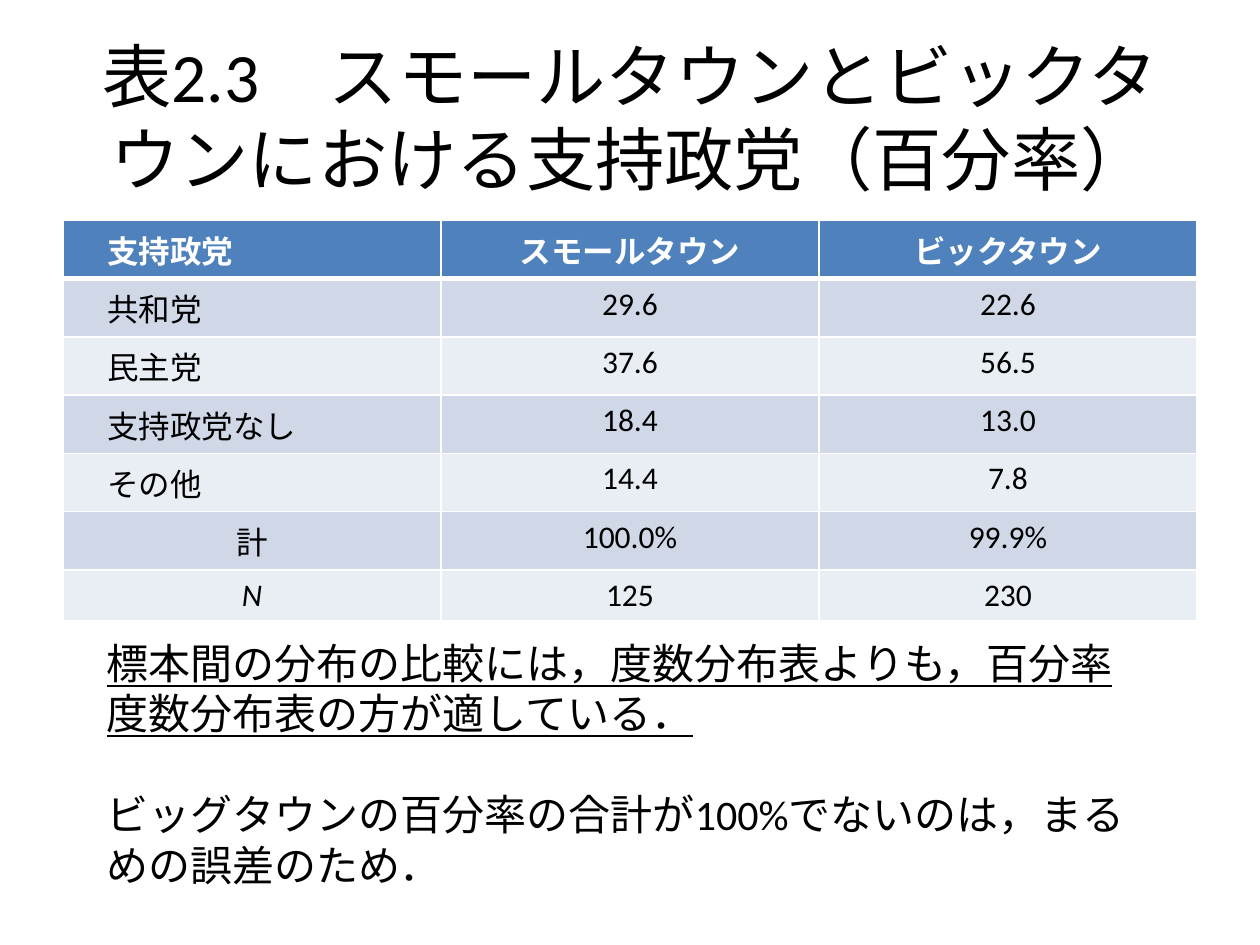
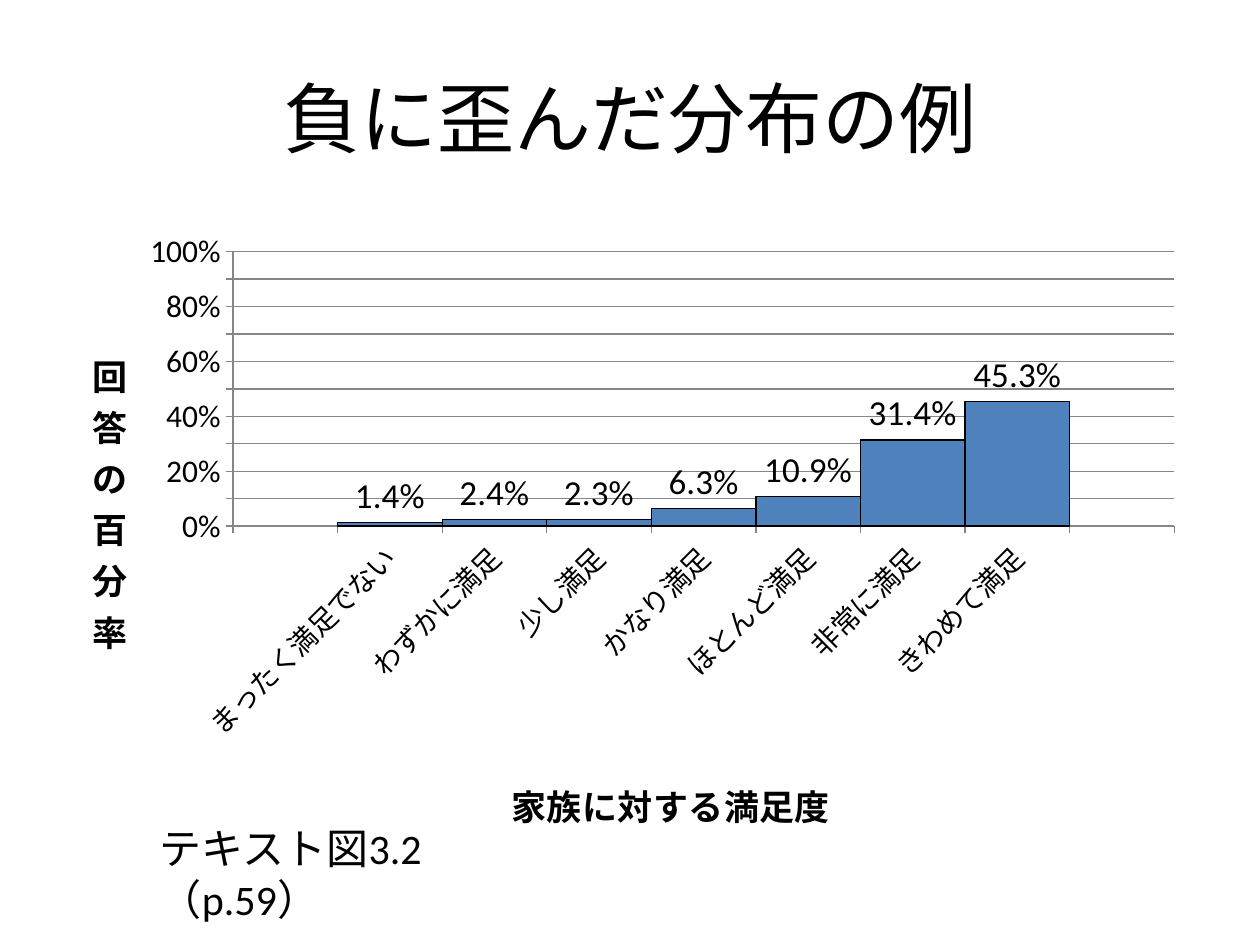
from lxml.etree import SubElement
from pptx import Presentation
from pptx.chart.data import CategoryChartData
from pptx.dml.color import RGBColor
from pptx.enum.chart import XL_CHART_TYPE, XL_LABEL_POSITION, XL_TICK_MARK
from pptx.enum.lang import MSO_LANGUAGE_ID
from pptx.enum.text import MSO_ANCHOR, MSO_AUTO_SIZE, PP_ALIGN
from pptx.oxml import parse_xml
from pptx.oxml.ns import nsdecls, qn
from pptx.util import Inches, Pt

FONT = "Calibri"
BLACK, WHITE, BLUE, GREY = "000000", "FFFFFF", "4F81BD", "868686"
BANDS = ("D0D8E8", "E9EDF4")


def rgb(value):
    return RGBColor.from_string(value)


def box(left, top, width, height):
    return [Inches(v) for v in (left, top, width, height)]


class Deck:
    def __init__(self):
        self.prs = Presentation()
        self.prs.slide_width, self.prs.slide_height = Inches(10), Inches(7.5)
        self.s = None

    def font(self, font, size, color=BLACK, bold=False):
        font.name, font.size, font.bold = FONT, Pt(size), bold
        font.color.rgb = rgb(color)

    def run(self, p, text, size, color=BLACK, bold=False, italic=False, underline=False):
        r = p.add_run()
        r.text = text
        self.font(r.font, size, color, bold)
        r.font.italic, r.font.underline = italic, underline
        r.font.language_id = MSO_LANGUAGE_ID.JAPANESE

    def slide(self, title, size):
        self.s = self.prs.slides.add_slide(self.prs.slide_layouts[5])
        sp = self.s.shapes.title
        sp.left, sp.top, sp.width, sp.height = box(0.5, 0.3, 9, 1.25)
        tf = sp.text_frame
        tf.auto_size, tf.vertical_anchor = MSO_AUTO_SIZE.NONE, MSO_ANCHOR.MIDDLE
        p = tf.paragraphs[0]
        p.alignment = PP_ALIGN.CENTER
        self.run(p, title, size)

    def text(self, bounds, paragraphs, size=24):
        tf = self.s.shapes.add_textbox(*box(*bounds)).text_frame
        tf.word_wrap = True
        for i, (text, underline) in enumerate(paragraphs):
            p = tf.add_paragraph() if i else tf.paragraphs[0]
            if i:
                p.space_before = Pt(size * 1.2)
            self.run(p, text, size, underline=underline)

    def borders(self, cell, top, bottom):
        tcPr = cell._tc.get_or_add_tcPr()
        for side, width in (("L", 1), ("R", 1), ("T", top), ("B", bottom)):
            tcPr.append(parse_xml(
                f'<a:ln{side} {nsdecls("a")} w="{Pt(width)}"><a:solidFill>'
                f'<a:srgbClr val="{WHITE}"/></a:solidFill></a:ln{side}>'))

    def table(self, bounds, rows, centred_labels):
        table = self.s.shapes.add_table(len(rows), len(rows[0]), *box(*bounds)).table
        for i, row in enumerate(rows):
            for j, text in enumerate(row):
                cell = table.cell(i, j)
                self.borders(cell, 3 if i == 1 else 1, 1 if i else 3)
                cell.fill.solid()
                cell.fill.fore_color.rgb = rgb(BANDS[(i - 1) % 2] if i else BLUE)
                p = cell.text_frame.paragraphs[0]
                if j or text in centred_labels:
                    p.alignment = PP_ALIGN.CENTER
                else:
                    cell.margin_left = Inches(0.35)
                self.run(p, text, 18, BLACK if i else WHITE, not i, text == "N")

    def layout(self, parent, index, **values):
        for old in parent.findall(qn("c:layout")):
            parent.remove(old)
        layout = parse_xml(f'<c:layout {nsdecls("c")}/>')
        manual = SubElement(layout, qn("c:manualLayout"))
        if "w" in values:
            SubElement(manual, qn("c:layoutTarget")).set("val", "inner")
        for key in ("x", "y"):
            SubElement(manual, qn(f"c:{key}Mode")).set("val", "edge")
        for key, value in values.items():
            SubElement(manual, qn(f"c:{key}")).set("val", str(value))
        parent.insert(index, layout)

    def axis(self, axis, title, size, x, y):
        self.font(axis.tick_labels.font, size)
        axis.major_tick_mark = XL_TICK_MARK.OUTSIDE
        axis.format.line.color.rgb = rgb(GREY)
        tf = axis.axis_title.text_frame
        self.run(tf.paragraphs[0], title, 20, bold=True)
        self.layout(axis.axis_title._element, 1, x=x, y=y)
        return tf

    def histogram(self, bounds, names, values, x_title, y_title):
        data = CategoryChartData()
        data.categories = names
        data.add_series("Series 1", values)
        chart = self.s.shapes.add_chart(
            XL_CHART_TYPE.COLUMN_CLUSTERED, *box(*bounds), data).chart
        chart.has_legend = chart.has_title = False
        self.font(chart.font, 10)
        self.layout(chart._chartSpace.chart.plotArea, 0, x=0.15, y=0.05, w=0.83, h=0.44)

        plot = chart.plots[0]
        plot.gap_width, plot.vary_by_categories = 0, False
        bars = plot.series[0].format
        bars.fill.solid()
        bars.fill.fore_color.rgb = rgb(BLUE)
        bars.line.color.rgb, bars.line.width = rgb(BLACK), Pt(0.75)
        plot.has_data_labels = True
        labels = plot.data_labels
        labels.show_value, labels.position = True, XL_LABEL_POSITION.OUTSIDE_END
        labels.number_format, labels.number_format_is_linked = "0.0%", False
        self.font(labels.font, 20)

        self.axis(chart.category_axis, x_title, 16, 0.39, 0.88)
        chart.category_axis._element.txPr.bodyPr.set("rot", "-2700000")
        axis = chart.value_axis
        tf = self.axis(axis, y_title, 18, 0.02, 0.19)
        body = tf._txBody.bodyPr
        body.set("rot", "0")
        body.set("vert", "wordArtVertRtl")
        axis.minimum_scale, axis.maximum_scale, axis.major_unit = 0, 1, 0.1
        axis.tick_labels.number_format = "0%"
        axis.tick_labels.number_format_is_linked = False
        axis.major_gridlines.format.line.color.rgb = rgb(GREY)


def main():
    deck = Deck()

    deck.slide("表2.3　スモールタウンとビックタウンにおける支持政党（百分率）", 39.6)
    deck.table((0.5, 1.75, 9, 2.84), [
        ("支持政党", "スモールタウン", "ビックタウン"),
        ("共和党", "29.6", "22.6"),
        ("民主党", "37.6", "56.5"),
        ("支持政党なし", "18.4", "13.0"),
        ("その他", "14.4", "7.8"),
        ("計", "100.0%", "99.9%"),
        ("N", "125", "230"),
    ], ("計", "N"))
    deck.text((0.75, 5.01, 8.43, 2.12), [
        ("標本間の分布の比較には，度数分布表よりも，百分率度数分布表の方が適している．", True),
        ("ビッグタウンの百分率の合計が100%でないのは，まるめの誤差のため．", False),
    ])

    deck.slide("負に歪んだ分布の例", 44)
    deck.text((1.17, 6.48, 3.12, 0.5), [("テキスト図3.2 （p.59）", False)])
    deck.histogram(
        (0.5, 1.75, 9, 4.95),
        ("", "まったく満足でない", "わずかに満足", "少し満足", "かなり満足",
         "ほとんど満足", "非常に満足", "きわめて満足", ""),
        (None, 0.014, 0.024, 0.023, 0.063, 0.109, 0.314, 0.453, None),
        "家族に対する満足度", "回答の百分率")

    deck.prs.save("out.pptx")


if __name__ == "__main__":
    main()
